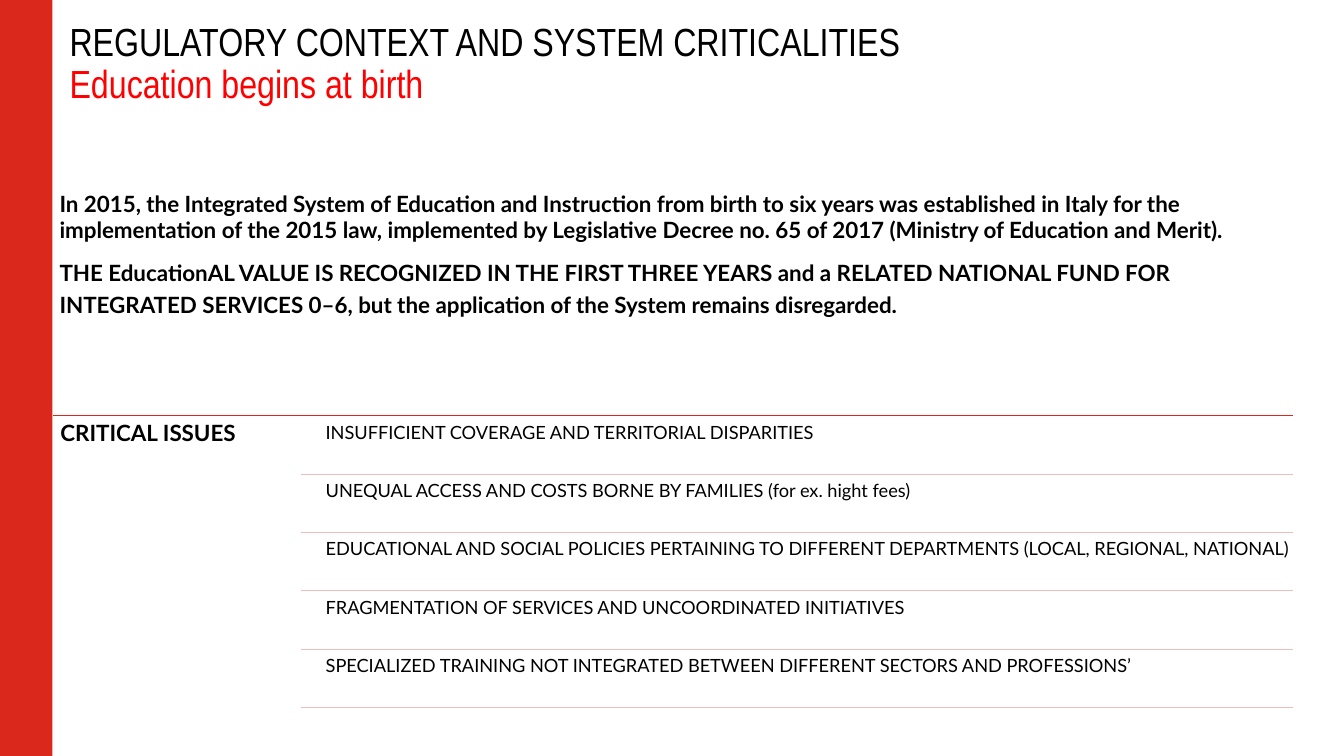
from dataclasses import dataclass

from lxml import etree
from pptx import Presentation
from pptx import util as u
from pptx.dml.color import RGBColor
from pptx.enum import shapes, text
from pptx.oxml.ns import qn


@dataclass(frozen=True)
class Theme:
    red: str = "DA291C"
    pale_red: str = "EDBEBD"
    bright_red: str = "FF0000"
    ink: str = "000000"
    title_font: str = "Arial Narrow"
    body_font: str = "Lato"
    title_size: int = 28
    body_size: int = 16
    issue_size: int = 13
    rule_width: float = 0.25


THEME = Theme()

INTRO = (
    ("In 2015, the Integrated System of Education and Instruction from birth to six years "
     "was established in Italy for the implementation of the 2015 law, implemented by "
     "Legislative Decree no. 65 of 2017 (Ministry of Education and Merit).", 1.0, 0),
    ("THE EducationAL VALUE IS RECOGNIZED IN THE FIRST THREE YEARS and a RELATED NATIONAL "
     "FUND FOR INTEGRATED SERVICES 0–6, but the application of the System remains "
     "disregarded.", 1.2, 7.5),
)

ISSUES = (
    "INSUFFICIENT COVERAGE AND TERRITORIAL DISPARITIES",
    "UNEQUAL ACCESS AND COSTS BORNE BY FAMILIES (for ex. hight fees)",
    "EDUCATIONAL AND SOCIAL POLICIES PERTAINING TO DIFFERENT DEPARTMENTS "
    "(LOCAL, REGIONAL, NATIONAL)",
    "FRAGMENTATION OF SERVICES AND UNCOORDINATED INITIATIVES",
    "SPECIALIZED TRAINING NOT INTEGRATED BETWEEN DIFFERENT SECTORS AND PROFESSIONS’",
)
LIST_TOP = 4.12
LIST_RIGHT = 12.82
ROW_STEP = 0.58


def place(shape, left, top, width, height):
    shape.left, shape.top = u.Inches(left), u.Inches(top)
    shape.width, shape.height = u.Inches(width), u.Inches(height)


def set_frame(frame, anchor, inset_x, inset_y):
    frame.word_wrap = True
    frame.auto_size = text.MSO_AUTO_SIZE.NONE
    frame.vertical_anchor = anchor
    frame.margin_left = frame.margin_right = u.Inches(inset_x)
    frame.margin_top = frame.margin_bottom = u.Inches(inset_y)


def set_paragraph(para, line_spacing=0.9, before=0):
    """Left-align a paragraph, drop its bullet and indent, and set its spacing."""
    properties = para._p.get_or_add_pPr()
    properties.set("marL", "0")
    properties.set("indent", "0")
    etree.SubElement(properties, qn("a:buNone"))
    para.alignment = text.PP_ALIGN.LEFT
    para.line_spacing = line_spacing
    para.space_before = u.Pt(before)
    para.space_after = u.Pt(0)


def add_text(para, words, size=THEME.body_size, font=THEME.body_font,
             color=THEME.ink, bold=False):
    span = para.add_run()
    span.text = words
    span.font.size = u.Pt(size)
    span.font.name = font
    span.font.bold = bold
    span.font.color.rgb = RGBColor.from_string(color)


def add_side_bar(page):
    bar = page.shapes.add_shape(shapes.MSO_SHAPE.RECTANGLE, 0, 0, u.Inches(0.52), u.Inches(7.5))
    bar.shadow.inherit = False
    bar.fill.solid()
    bar.fill.fore_color.rgb = RGBColor.from_string(THEME.red)
    bar.line.fill.background()


def add_rule(page, left, top, color):
    rule = page.shapes.add_connector(shapes.MSO_CONNECTOR.STRAIGHT, u.Inches(left),
                                     u.Inches(top), u.Inches(LIST_RIGHT), u.Inches(top))
    rule.line.color.rgb = RGBColor.from_string(color)
    rule.line.width = u.Pt(THEME.rule_width)
    etree.SubElement(rule._element.spPr, qn("a:effectLst"))


def add_label(page, words, left, top, width, height, inset, **style):
    box = page.shapes.add_textbox(0, 0, 0, 0)
    place(box, left, top, width, height)
    set_frame(box.text_frame, text.MSO_ANCHOR.TOP, inset, inset)
    para = box.text_frame.paragraphs[0]
    set_paragraph(para)
    add_text(para, words, **style)


def fill_title(title):
    place(title, 0.59, 0.12, 10.42, 0.99)
    set_frame(title.text_frame, text.MSO_ANCHOR.BOTTOM, 0.1, 0.05)
    para = title.text_frame.paragraphs[0]
    set_paragraph(para)
    style = {"size": THEME.title_size, "font": THEME.title_font}
    add_text(para, "REGULATORY CONTEXT AND SYSTEM CRITICALITIES", **style)
    para.add_line_break()
    add_text(para, "Education begins at birth", color=THEME.bright_red, **style)


def fill_intro(body):
    place(body, 0.52, 1.15, 12.57, 2.74)
    frame = body.text_frame
    set_frame(frame, text.MSO_ANCHOR.MIDDLE, 0.07, 0.04)
    for index, (words, line_spacing, before) in enumerate(INTRO):
        para = frame.add_paragraph() if index else frame.paragraphs[0]
        set_paragraph(para, line_spacing, before)
        add_text(para, words, bold=True)


def add_issues(page):
    add_rule(page, 0.53, LIST_TOP, THEME.red)
    add_label(page, "CRITICAL ISSUES", 0.53, LIST_TOP, 2.46, 2.93, 0.07, bold=True)
    for row, issue in enumerate(ISSUES):
        top = LIST_TOP + row * ROW_STEP
        add_label(page, issue, 3.18, top + 0.03, 9.65, 0.55, 0.05, size=THEME.issue_size)
        add_rule(page, 2.99, top + ROW_STEP, THEME.pale_red)


def main():
    deck = Presentation()
    deck.slide_width, deck.slide_height = u.Inches(13.33), u.Inches(7.5)
    page = deck.slides.add_slide(deck.slide_layouts.get_by_name("Title and Content"))
    add_side_bar(page)
    fill_title(page.shapes.title)
    fill_intro(page.placeholders[1])
    add_issues(page)
    deck.save("out.pptx")


if __name__ == "__main__":
    main()
